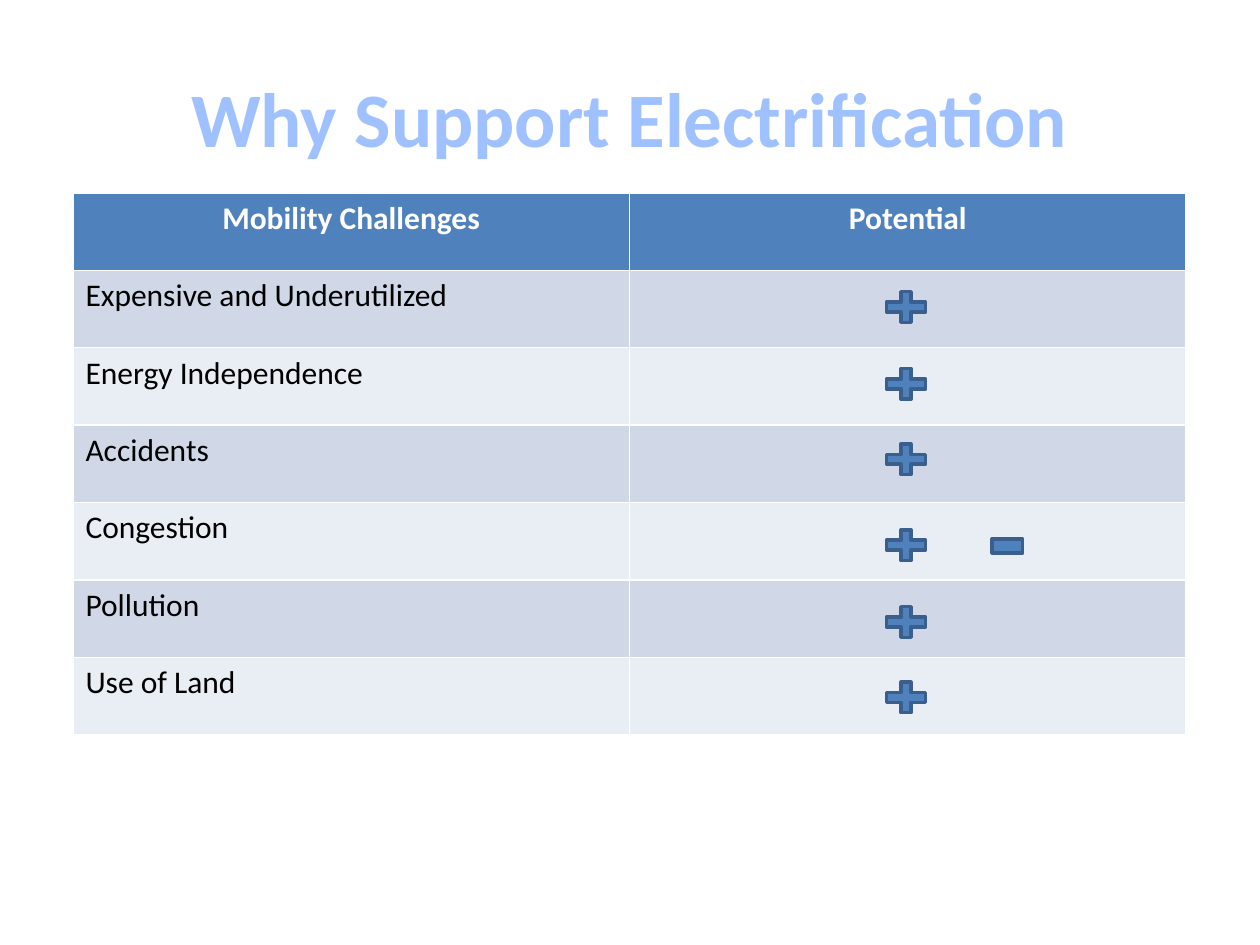
from dataclasses import dataclass

from pptx import Presentation
from pptx.dml.color import RGBColor
from pptx.enum.shapes import MSO_SHAPE as Shape
from pptx.enum.text import MSO_ANCHOR as Anchor, PP_ALIGN as Align
from pptx.util import Cm, Pt


@dataclass(frozen=True)
class Theme:
    font: str = "Calibri"
    title_size: int = 44
    table_size: int = 18
    title: str = "A0C1FF"
    accent: str = "4F81BD"
    outline: str = "3A5F8C"
    header_text: str = "FFFFFF"
    body_text: str = "000000"
    bands: tuple = ("D0D8E8", "E9EDF4")


THEME = Theme()
HEADERS = ("Mobility Challenges", "Potential")
# Each challenge with the top of its plus sign, in cm
CHALLENGES = (
    ("Expensive and Underutilized", 5.77),
    ("Energy Independence", 7.32),
    ("Accidents", 8.84),
    ("Congestion", 10.57),
    ("Pollution", 12.12),
    ("Use of Land", 13.64),
)


def write_text(frame, text, size, color, bold=False, align=Align.LEFT):
    paragraph = frame.paragraphs[0]
    paragraph.alignment = align
    run = paragraph.add_run()
    run.text = text
    run.font.name = THEME.font
    run.font.size = Pt(size)
    run.font.bold = bold
    run.font.color.rgb = RGBColor.from_string(color)


def paint(fill, color):
    fill.solid()
    fill.fore_color.rgb = RGBColor.from_string(color)


def set_title(slide, text):
    title = slide.shapes.title
    title.left, title.top = Cm(1.27), Cm(0.76)
    title.width, title.height = Cm(22.86), Cm(3.18)
    title.text_frame.vertical_anchor = Anchor.MIDDLE
    write_text(title.text_frame, text, THEME.title_size, THEME.title,
               bold=True, align=Align.CENTER)


def add_challenge_table(slide):
    row_count = len(CHALLENGES) + 1
    table = slide.shapes.add_table(
        row_count, len(HEADERS), Cm(1.47), Cm(3.89), Cm(22.44), Cm(1.56 * row_count)
    ).table
    for column, header in enumerate(HEADERS):
        cell = table.cell(0, column)
        paint(cell.fill, THEME.accent)
        write_text(cell.text_frame, header, THEME.table_size, THEME.header_text,
                   bold=True, align=Align.CENTER)
    for row, (challenge, _) in enumerate(CHALLENGES, start=1):
        for column in range(len(HEADERS)):
            paint(table.cell(row, column).fill, THEME.bands[(row - 1) % 2])
        write_text(table.cell(row, 0).text_frame, challenge,
                   THEME.table_size, THEME.body_text)


def add_sign(slide, kind, left, top, width, height):
    sign = slide.shapes.add_shape(kind, Cm(left), Cm(top), Cm(width), Cm(height))
    sign.shadow.inherit = False
    paint(sign.fill, THEME.accent)
    paint(sign.line.fill, THEME.outline)
    sign.line.width = Pt(2)


def main():
    presentation = Presentation()
    presentation.slide_width, presentation.slide_height = Cm(25.4), Cm(19.05)
    slide = presentation.slides.add_slide(presentation.slide_layouts[5])
    set_title(slide, "Why Support Electrification")
    add_challenge_table(slide)
    for _, top in CHALLENGES:
        add_sign(slide, Shape.MATH_PLUS, 17.73, top, 1.07, 0.84)
    add_sign(slide, Shape.MATH_MINUS, 19.89, 10.41, 0.84, 1.19)
    presentation.save("out.pptx")


if __name__ == "__main__":
    main()
